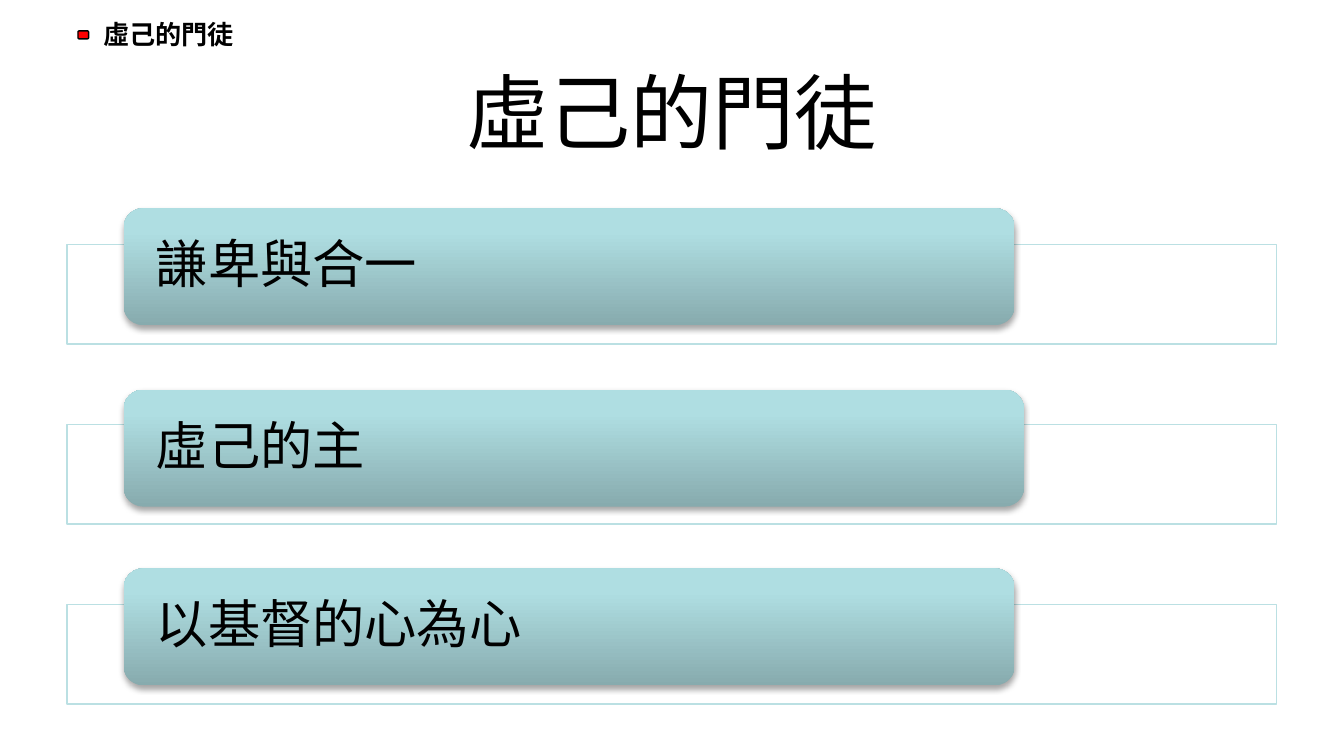
from pptx import Presentation
from pptx.dml.color import RGBColor
from pptx.enum import shapes, text
from pptx.oxml import parse_xml
from pptx.oxml.ns import nsdecls, qn
from pptx.util import Inches, Pt

FONT = "Arial"
BLACK, RED, WHITE, PALE = "000000", "FF0000", "FFFFFF", "BBE0E3"
GRADIENT = [(0, "87ABAE"), (80, "AFDEE2"), (100, "AFE0E4")]
# Point, bar width, bar top
POINTS = [("謙卑與合一", 6.63, 1.55), ("虛己的主", 6.7, 2.9), ("以基督的心為心", 6.63, 4.23)]
FRAME_TOP, FRAME_PITCH = 1.82, 1.34


def color(value):
    return RGBColor.from_string(value)


def set_text(shape, words, size, bold=False, align=text.PP_ALIGN.LEFT, **frame_format):
    frame = shape.text_frame
    frame.word_wrap = True
    for name, value in frame_format.items():
        setattr(frame, name, value)
    paragraph = frame.paragraphs[0]
    paragraph.alignment = align
    run = paragraph.add_run()
    run.text = words
    for name, value in {"name": FONT, "size": Pt(size), "bold": bold}.items():
        setattr(run.font, name, value)
    run.font.color.rgb = color(BLACK)
    return paragraph


def add_box(slide, kind, box, fill=None, line=None):
    shape = slide.shapes.add_shape(kind, *map(Inches, box))
    shape.shadow.inherit = False
    if fill:
        shape.fill.solid()
        shape.fill.fore_color.rgb = color(fill)
    if line:
        shape.line.color.rgb = color(line)
        shape.line.width = Pt(0.75)
    else:
        shape.line.fill.background()
    return shape


def add_gradient_and_shadow(shape):
    properties = shape._element.spPr
    stops = "".join(
        f'<a:gs pos="{position * 1000}"><a:srgbClr val="{value}"/></a:gs>'
        for position, value in GRADIENT
    )
    shape.fill.background()
    properties.replace(properties.find(qn("a:noFill")), parse_xml(
        f'<a:gradFill {nsdecls("a")} rotWithShape="1"><a:gsLst>{stops}</a:gsLst>'
        '<a:lin ang="16200000" scaled="0"/></a:gradFill>'))
    properties.find(qn("a:effectLst")).append(parse_xml(
        f'<a:outerShdw {nsdecls("a")} blurRad="{Pt(3.1)}" dist="{Pt(1.8)}" dir="5400000" '
        'rotWithShape="0"><a:srgbClr val="000000"><a:alpha val="35000"/></a:srgbClr>'
        '</a:outerShdw>'))


def add_section_label(slide, left, top, width, height):
    label = slide.shapes.add_textbox(*map(Inches, (left, top, width, height)))
    set_text(label, "虛己的門徒", 14, bold=True,
             auto_size=text.MSO_AUTO_SIZE.SHAPE_TO_FIT_TEXT)
    # Red marker beside the label
    add_box(slide, shapes.MSO_SHAPE.ROUNDED_RECTANGLE,
            (left - 0.09, top + 0.14, 0.08, 0.06), RED, BLACK)


def add_title(slide, left, top, width, height):
    title = slide.shapes.title
    for name, value in zip(("left", "top", "width", "height"), (left, top, width, height)):
        setattr(title, name, Inches(value))
    set_text(title, "虛己的門徒", 44, align=text.PP_ALIGN.CENTER,
             vertical_anchor=text.MSO_ANCHOR.MIDDLE, auto_size=text.MSO_AUTO_SIZE.NONE)


def add_point(slide, left, top, width, words, bar_width, bar_top):
    # Outlined frame behind the bar
    frame = add_box(slide, shapes.MSO_SHAPE.RECTANGLE, (left, top, width, 0.74), WHITE, PALE)
    fill_color = frame._element.spPr.find(qn("a:solidFill")).find(qn("a:srgbClr"))
    fill_color.append(parse_xml(f'<a:alpha {nsdecls("a")} val="90000"/>'))
    # Gradient bar
    bar_box = (left + 0.42, bar_top, bar_width, 0.87)
    add_gradient_and_shadow(add_box(slide, shapes.MSO_SHAPE.ROUNDED_RECTANGLE, bar_box))
    # Words on the bar
    label = slide.shapes.add_textbox(*map(Inches, bar_box))
    paragraph = set_text(label, words, 28, vertical_anchor=text.MSO_ANCHOR.MIDDLE,
                         margin_left=Inches(0.24), margin_right=Inches(0.24),
                         margin_top=0, margin_bottom=0)
    paragraph.line_spacing = 0.9


def main():
    presentation = Presentation()
    # Widescreen 16:9
    presentation.slide_width = Inches(10)
    presentation.slide_height = Inches(10) * 9 // 16
    slide = presentation.slides.add_slide(presentation.slide_layouts[5])
    add_section_label(slide, 0.67, 0.09, 4.08, 0.34)
    add_title(slide, 0.5, 0.35, 9, 0.94)
    for index, (words, bar_width, bar_top) in enumerate(POINTS):
        add_point(slide, 0.5, FRAME_TOP + index * FRAME_PITCH, 9, words, bar_width, bar_top)
    presentation.save("out.pptx")


if __name__ == "__main__":
    main()
